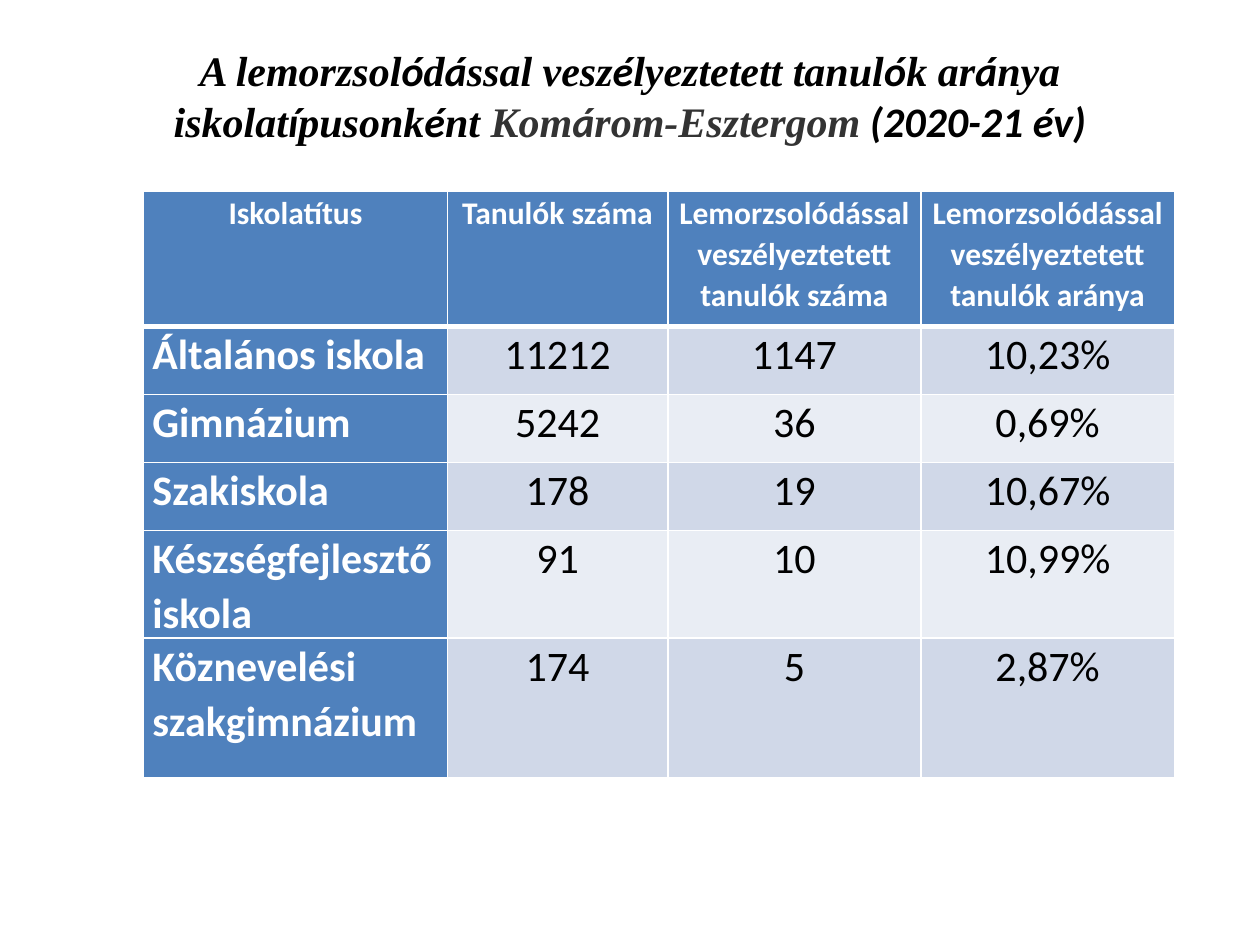
from itertools import groupby

from lxml.etree import SubElement
from pptx import Presentation
from pptx.dml.color import RGBColor
from pptx.enum.text import MSO_ANCHOR as Anchor, PP_ALIGN as Align
from pptx.oxml.ns import qn
from pptx.util import Inches, Pt

TITLE = [
    ("A lemorzsolódással veszélyeztetett tanulók aránya iskolatípusonként ", "000000"),
    ("Komárom-Esztergom", "333333"),
]
YEAR = " (2020-21 év)"
ROWS = [
    ["Iskolatítus", "Tanulók száma",
     "Lemorzsolódással veszélyeztetett tanulók száma",
     "Lemorzsolódással veszélyeztetett tanulók aránya"],
    ["Általános iskola", "11212", "1147", "10,23%"],
    ["Gimnázium", "5242", "36", "0,69%"],
    ["Szakiskola", "178", "19", "10,67%"],
    ["Készségfejlesztő iskola", "91", "10", "10,99%"],
    ["Köznevelési szakgimnázium", "174", "5", "2,87%"],
]
COL_SPANS = [24.1, 17.5, 20.1, 20.1]
ROW_SPANS = [10.7, 5.4, 5.4, 5.4, 7.9, 11.1]


def rgb(color):
    """Turn a hex string into a colour."""
    return RGBColor.from_string(color)


def apply(target, values):
    """Set each named attribute on the target."""
    for name, value in values.items():
        setattr(target, name, value)


class Deck:
    """Style, grid and current slide."""

    sans, serif = "Calibri", "Times New Roman"
    blue, bands, white, black = "4F81BD", ("E9EDF4", "D0D8E8"), "FFFFFF", "000000"
    cols, rows = 100, 75

    def __init__(self):
        """Start a presentation with one blank slide."""
        self.prs = Presentation()
        apply(self.prs, {"slide_width": Inches(10), "slide_height": Inches(7.5)})
        self.s = self.prs.slides.add_slide(self.prs.slide_layouts[6])

    def x(self, n):
        """Return the width of n grid columns."""
        return round(self.prs.slide_width * n / self.cols)

    def y(self, n):
        """Return the height of n grid rows."""
        return round(self.prs.slide_height * n / self.rows)

    def box(self, left, top, width, height):
        """Return a grid area as lengths."""
        return self.x(left), self.y(top), self.x(width), self.y(height)

    def run(self, p, text, color, **font):
        """Add a formatted run to a paragraph."""
        r = p.add_run()
        r.text = text
        apply(r.font, {"name": self.sans, "size": Pt(24), **font})
        r.font.color.rgb = rgb(color)

    def title(self, parts, ending, *area):
        """Add a serif title with sans accented letters and a sans ending."""
        tf = self.s.shapes.add_textbox(*self.box(*area)).text_frame
        apply(tf, {"word_wrap": True, "vertical_anchor": Anchor.MIDDLE,
                   "margin_bottom": self.y(3.9)})
        p = tf.paragraphs[0]
        p.alignment = Align.CENTER
        style = {"bold": True, "italic": True}
        for text, color in parts:
            for accented, letters in groupby(text, lambda c: c in "áéíó"):
                name = self.sans if accented else self.serif
                self.run(p, "".join(letters), color, name=name, **style)
        self.run(p, ending, self.black, **style)

    def border(self, cell, side, width):
        """Draw one white cell edge."""
        ln = SubElement(cell._tc.get_or_add_tcPr(), qn(f"a:ln{side}"), w=str(Pt(width)))
        fill = SubElement(ln, qn("a:solidFill"))
        SubElement(fill, qn("a:srgbClr"), val=self.white)

    def cell(self, cell, text, i, j):
        """Fill and format the cell in row i and column j."""
        head = i == 0
        label = head or j == 0
        for side in "LRTB" if head else "LRB":
            self.border(cell, side, 3 if head and side == "B" else 1)
        cell.fill.solid()
        cell.fill.fore_color.rgb = rgb(self.blue if label else self.bands[i % 2])
        apply(cell, {"margin_left": self.x(0.7), "margin_right": self.x(0.7),
                     "margin_top": 0, "margin_bottom": 0})
        p = cell.text_frame.paragraphs[0]
        apply(p, {"line_spacing": 1.07,
                  "alignment": Align.CENTER if head or j else Align.LEFT})
        self.run(p, text, self.white if label else self.black,
                 size=Pt(18 if head else 24), bold=label)

    def table(self, data, left, top, widths, heights):
        """Add a table with a header row and a label column."""
        area = self.box(left, top, sum(widths), sum(heights))
        table = self.s.shapes.add_table(len(data), len(widths), *area).table
        table.first_col = True
        for col, n in zip(table.columns, widths):
            col.width = self.x(n)
        for row, n in zip(table.rows, heights):
            row.height = self.y(n)
        for i, texts in enumerate(data):
            for j, text in enumerate(texts):
                self.cell(table.cell(i, j), text, i, j)


def main():
    """Build and save the slide."""
    deck = Deck()
    deck.title(TITLE, YEAR, 5, 3, 90, 12.5)
    deck.table(ROWS, 11.4, 15.2, COL_SPANS, ROW_SPANS)
    deck.prs.save("out.pptx")


if __name__ == "__main__":
    main()
